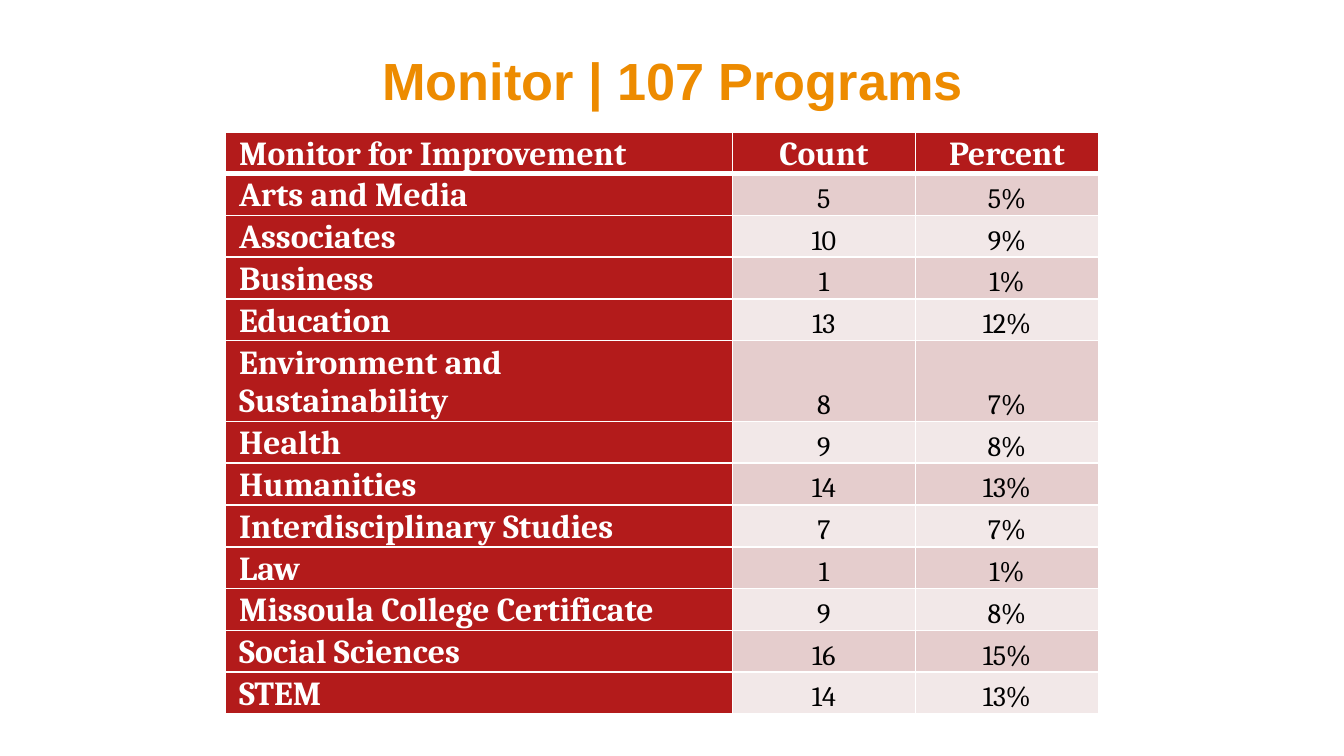
from lxml.etree import SubElement
from pptx import Presentation
from pptx.dml.color import RGBColor
from pptx.enum.text import MSO_ANCHOR as Anchor, PP_ALIGN as Align
from pptx.oxml.ns import qn
from pptx.util import Cm, Pt

RED, WHITE, BLACK, ORANGE = "B31B1B", "FFFFFF", "000000", "ED8B00"
BANDS = ("E5CDCD", "F2E8E8")

HEADINGS = ("Monitor for Improvement", "Count", "Percent")
PROGRAMS = [
    ("Arts and Media", "5", "5%"),
    ("Associates", "10", "9%"),
    ("Business", "1", "1%"),
    ("Education", "13", "12%"),
    ("Environment and Sustainability", "8", "7%"),
    ("Health", "9", "8%"),
    ("Humanities", "14", "13%"),
    ("Interdisciplinary Studies", "7", "7%"),
    ("Law", "1", "1%"),
    ("Missoula College Certificate", "9", "8%"),
    ("Social Sciences", "16", "15%"),
    ("STEM", "14", "13%"),
]


def color(code):
    return RGBColor.from_string(code)


class SlideBuilder:
    title_font = "Arial"
    table_font = "Cambria"

    def __init__(self, page):
        self.page = page

    def set_text(self, frame, text, font, size, ink, bold, align):
        para = frame.paragraphs[0]
        para.text = text
        para.alignment = align
        para.font.name = font
        para.font.size = Pt(size)
        para.font.bold = bold
        para.font.color.rgb = color(ink)

    def title(self, text, left, top, width, height):
        box = self.page.shapes.add_textbox(Cm(left), Cm(top), Cm(width), Cm(height))
        frame = box.text_frame
        frame.word_wrap = True
        frame.vertical_anchor = Anchor.MIDDLE
        self.set_text(frame, text, self.title_font, 28, ORANGE, True, Align.CENTER)

    def borders(self, cell, top, bottom):
        properties = cell._tc.get_or_add_tcPr()
        for side, points in (("L", 1), ("R", 1), ("T", top), ("B", bottom)):
            line = SubElement(properties, qn(f"a:ln{side}"), w=str(Pt(points)))
            fill = SubElement(line, qn("a:solidFill"))
            SubElement(fill, qn("a:srgbClr"), val=WHITE)

    def cell(self, cell, text, row, column):
        # Borders come before the fill in the cell properties
        self.borders(cell, top=3 if row == 1 else 1, bottom=3 if row == 0 else 1)
        strong = row == 0 or column == 0
        cell.fill.solid()
        cell.fill.fore_color.rgb = color(RED if strong else BANDS[(row - 1) % 2])
        cell.vertical_anchor = Anchor.BOTTOM
        cell.margin_left = cell.margin_right = Cm(0.27)
        cell.margin_top = cell.margin_bottom = Cm(0)
        self.set_text(cell.text_frame, text, self.table_font, 18 if strong else 15,
                      WHITE if strong else BLACK, strong,
                      Align.LEFT if column == 0 else Align.CENTER)

    def table(self, rows, left, top, widths, row_height):
        table = self.page.shapes.add_table(
            len(rows), len(widths), Cm(left), Cm(top),
            Cm(sum(widths)), Cm(row_height * len(rows))).table
        for column, width in zip(table.columns, widths):
            column.width = Cm(width)
        for number, values in enumerate(rows):
            table.rows[number].height = Cm(row_height)
            for column, text in enumerate(values):
                self.cell(table.cell(number, column), text, number, column)


def main():
    deck = Presentation()
    deck.slide_width, deck.slide_height = Cm(25.4), Cm(14.29)
    slide = SlideBuilder(deck.slides.add_slide(deck.slide_layouts[6]))

    # Heading
    slide.title("Monitor | 107 Programs", 0.43, 0.79, 24.56, 1.42)

    # Programs by field
    slide.table([HEADINGS, *PROGRAMS], 4.25, 2.49, (9.59, 3.46, 3.46), 0.79)

    deck.save("out.pptx")


if __name__ == "__main__":
    main()
